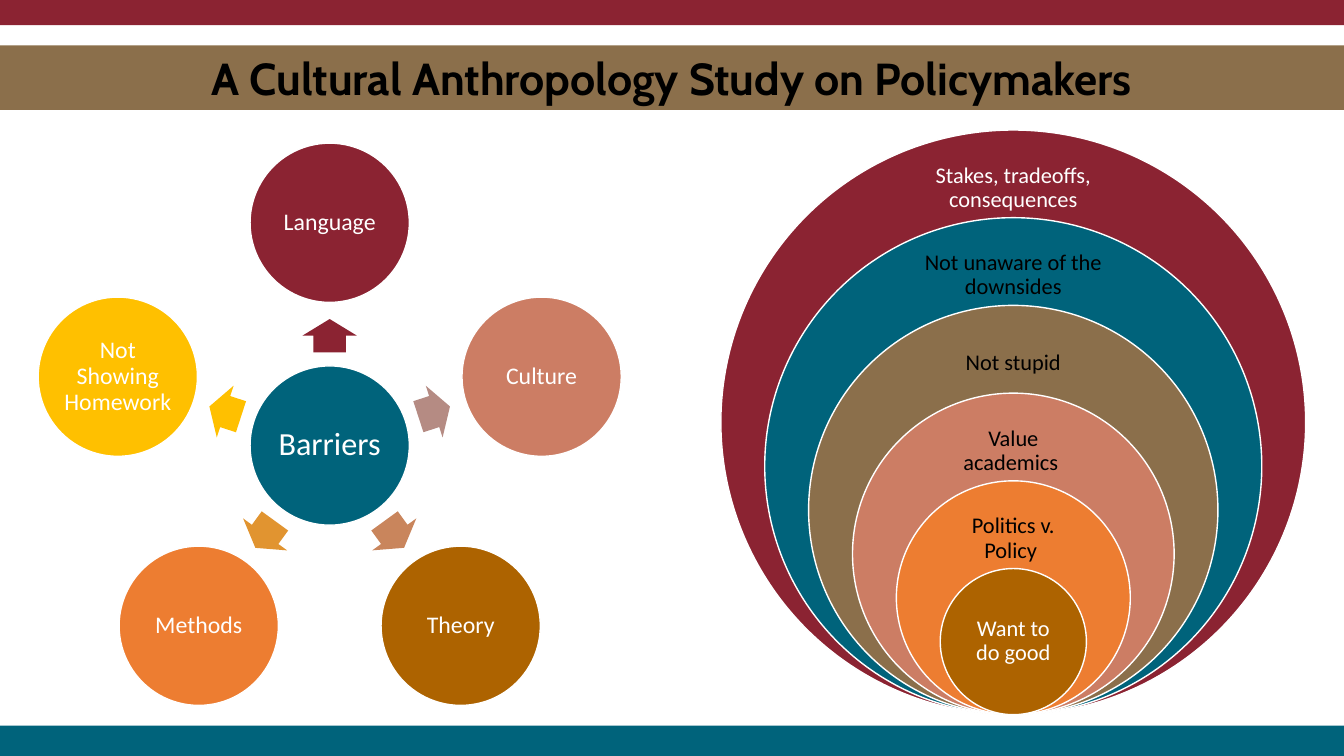
from math import cos, radians, sin

from pptx import Presentation
from pptx.dml.color import RGBColor
from pptx.enum.shapes import MSO_SHAPE as Shape
from pptx.enum.text import MSO_ANCHOR as Anchor, PP_ALIGN as Align
from pptx.util import Inches, Pt

CRIMSON, TEAL, BRONZE = "8B2332", "00637B", "8B6F4B"
SALMON, ORANGE, BROWN, GOLD = "CC7D64", "ED7D31", "AD6300", "FFC000"
WHITE, BLACK = "FFFFFF", "000000"


def color(hex_string):
    return RGBColor.from_string(hex_string)


class SlideBuilder:
    title_font = "Cabin"
    body_font = "Calibri"

    def __init__(self, slide):
        self.slide = slide

    def set_text(self, shape, text, size, ink, inset, font=body_font, bold=False, spacing=0.9):
        frame = shape.text_frame
        frame.text = text
        frame.word_wrap = True
        frame.vertical_anchor = Anchor.MIDDLE
        frame.margin_left = frame.margin_right = Inches(inset)
        frame.margin_top = frame.margin_bottom = Inches(inset)
        paragraph = frame.paragraphs[0]
        paragraph.alignment = Align.CENTER
        paragraph.line_spacing = spacing
        style = paragraph.runs[0].font
        style.name, style.size, style.bold = font, Pt(size), bold
        style.color.rgb = color(ink)

    def title(self, text, left, top, width, height, fill):
        title = self.slide.shapes.title
        title.left, title.top = Inches(left), Inches(top)
        title.width, title.height = Inches(width), Inches(height)
        title.fill.solid()
        title.fill.fore_color.rgb = color(fill)
        self.set_text(title, text, 32, BLACK, 0.05, self.title_font, True, 1.0)

    def shape(self, kind, left, top, width, height, fill, outline=None):
        shape = self.slide.shapes.add_shape(
            kind, Inches(left), Inches(top), Inches(width), Inches(height))
        shape.shadow.inherit = False
        shape.fill.solid()
        shape.fill.fore_color.rgb = color(fill)
        if outline:
            shape.line.color.rgb = color(outline)
            shape.line.width = Pt(1)
        else:
            shape.line.fill.background()
        return shape

    def circle(self, center_x, center_y, diameter, fill):
        return self.shape(Shape.OVAL, center_x - diameter / 2, center_y - diameter / 2,
                          diameter, diameter, fill, WHITE)

    def arrow(self, center_x, center_y, angle, fill):
        width, height = 0.33, 0.54
        arrow = self.shape(Shape.RIGHT_ARROW, center_x - width / 2, center_y - height / 2,
                           width, height, fill)
        arrow.adjustments[0], arrow.adjustments[1] = 0.6, 0.5
        arrow.rotation = angle % 360

    def label(self, text, center_x, top, width, height, ink):
        box = self.slide.shapes.add_textbox(
            Inches(center_x - width / 2), Inches(top), Inches(width), Inches(height))
        self.set_text(box, text, 16, ink, 0.12)


def draw_barriers(builder):
    hub_x, hub_y, diameter = 3.27, 4.42, 1.58
    spoke_radius, arrow_radius = 2.21, 1.09
    spokes = [
        ("Language", CRIMSON, CRIMSON),
        ("Culture", SALMON, "B58B83"),
        ("Theory", BROWN, "C9855C"),
        ("Methods", ORANGE, "E19430"),
        ("Not Showing Homework", GOLD, GOLD),
    ]
    hub = builder.circle(hub_x, hub_y, diameter, TEAL)
    builder.set_text(hub, "Barriers", 23, WHITE, 0.03)
    for index, (text, fill, arrow_fill) in enumerate(spokes):
        angle = -90 + index * 360 / len(spokes)
        across, down = cos(radians(angle)), sin(radians(angle))
        builder.arrow(hub_x + arrow_radius * across, hub_y + arrow_radius * down,
                      angle, arrow_fill)
        spoke = builder.circle(hub_x + spoke_radius * across, hub_y + spoke_radius * down,
                               diameter, fill)
        builder.set_text(spoke, text, 17, WHITE, 0.02)


def draw_nested_circles(builder):
    center_x, bottom, largest, step = 10.05, 7.09, 5.8, 0.87
    rings = [
        ("Stakes, tradeoffs, consequences", CRIMSON, WHITE, 2.17),
        ("Not unaware of the downsides", TEAL, BLACK, 2.13),
        ("Not stupid", BRONZE, BLACK, 2.1),
        ("Value academics ", SALMON, BLACK, 1.72),
        ("Politics v. Policy ", ORANGE, BLACK, 1.51),
    ]
    for index, (text, fill, ink, label_width) in enumerate(rings):
        diameter = largest - index * step
        builder.circle(center_x, bottom - diameter / 2, diameter, fill)
        builder.label(text, center_x, bottom - diameter + 0.29, label_width, 0.57, ink)

    # Innermost circle carries its own text
    diameter = largest - len(rings) * step
    core = builder.circle(center_x, bottom - diameter / 2, diameter, BROWN)
    builder.set_text(core, "Want to do good", 16, WHITE, 0.12)


def main():
    presentation = Presentation()
    presentation.slide_width, presentation.slide_height = Inches(13.33), Inches(7.5)
    title_only = presentation.slide_layouts[5]
    builder = SlideBuilder(presentation.slides.add_slide(title_only))

    # Title and edge bands
    builder.shape(Shape.RECTANGLE, 0, 0, 13.33, 0.25, CRIMSON)
    builder.shape(Shape.RECTANGLE, 0, 7.2, 13.33, 0.3, TEAL)
    builder.title("A Cultural Anthropology Study on Policymakers", 0, 0.45, 13.33, 0.64, BRONZE)

    # Diagrams
    draw_barriers(builder)
    draw_nested_circles(builder)

    presentation.save("out.pptx")


if __name__ == "__main__":
    main()
